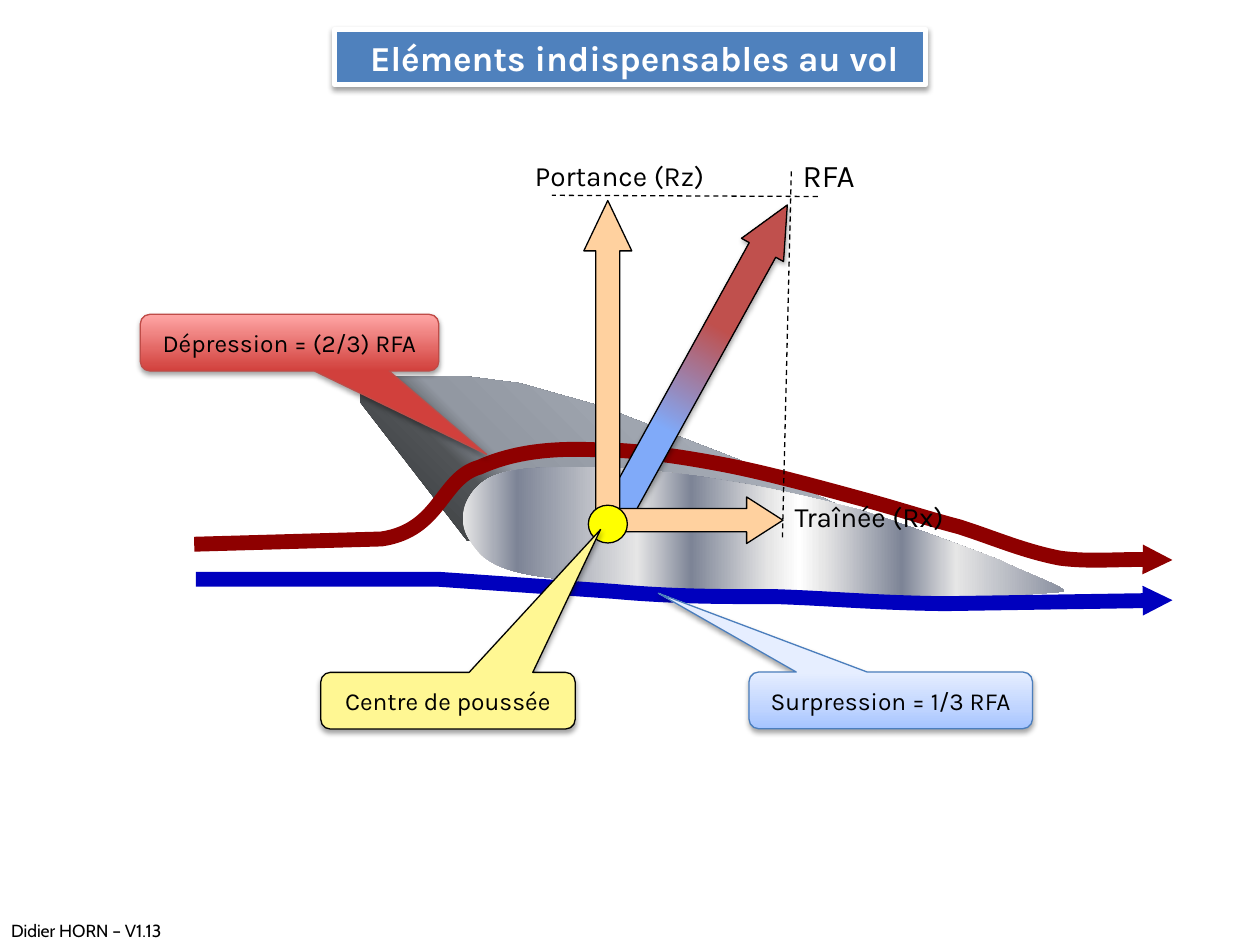
from lxml import etree
from pptx import Presentation
from pptx.dml.color import RGBColor
from pptx.enum import dml, shapes, text
from pptx.oxml import ns
from pptx.util import Pt

SHAPE = shapes.MSO_SHAPE
ANCHOR = text.MSO_ANCHOR
METAL = [(0, "E6E6E6"), (9, "7D8496"), (29, "E6E6E6"), (38, "7D8496"),
         (51, "E6E6E6"), (56, "FFFFFF"), (60, "E6E6E6"), (73, "7D8496"),
         (82, "E6E6E6"), (100, "8A90A0")]
SHADE = [(0, "303234"), (27, "505356"), (35, "9298A2"), (100, "B4BAC4")]


def rgb(color):
    return RGBColor.from_string(color)


def sub(parent, tag, **attrs):
    """Append one DrawingML element."""
    return etree.SubElement(parent, ns.qn(tag), {k: str(v) for k, v in attrs.items()})


def paint(sp, fill=None, line=None, width=0.75, angle=270, shadow=False):
    """Fill with a colour or a list of gradient stops, then line and shadow."""
    sp.shadow.inherit = False
    if fill is None:
        sp.fill.background()
    elif isinstance(fill, str):
        sp.fill.solid()
        sp.fill.fore_color.rgb = rgb(fill)
    else:
        sp.fill.gradient()
        grad = sp._element.spPr.find(ns.qn("a:gradFill"))
        for child in list(grad):
            grad.remove(child)
        stops = sub(grad, "a:gsLst")
        for pos, color in fill:
            sub(sub(stops, "a:gs", pos=pos * 1000), "a:srgbClr", val=color)
        sub(grad, "a:lin", ang=angle * 60000, scaled=0)
    if line:
        sp.line.color.rgb = rgb(line)
        sp.line.width = Pt(width)
    else:
        sp.line.fill.background()
    if shadow:
        effects = sp._element.spPr.find(ns.qn("a:effectLst"))
        outer = sub(effects, "a:outerShdw", blurRad=Pt(3.1), dist=Pt(1.7),
                    dir=90 * 60000, rotWithShape=0)
        sub(sub(outer, "a:srgbClr", val="000000"), "a:alpha", val=36000)


def write(sp, words, size, color="000000", font="Karla", bold=False,
          align=text.PP_ALIGN.CENTER, anchor=ANCHOR.MIDDLE, wrap=True):
    tf = sp.text_frame
    tf.word_wrap = wrap
    tf.vertical_anchor = anchor
    p = tf.paragraphs[0]
    p.alignment = align
    r = p.add_run()
    r.text = words
    r.font.size, r.font.name, r.font.bold = Pt(size), font, bold
    r.font.color.rgb = rgb(color)


def add_label(slide, box, words, size, **style):
    write(slide.shapes.add_textbox(*map(Pt, box)), words, size,
          anchor=ANCHOR.TOP, **style)


def add_preset(slide, kind, box, adjust=(), **style):
    sp = slide.shapes.add_shape(kind, *map(Pt, box))
    for i, value in enumerate(adjust):
        sp.adjustments[i] = value
    paint(sp, **style)
    return sp


def add_outline(slide, x, y, steps, close=True, **style):
    """Draw steps of one point (a line) or three points (a curve)."""
    steps = [[(Pt(x + px), Pt(y + py)) for px, py in step] for step in steps]
    builder = slide.shapes.build_freeform(*steps[0][-1])
    builder.add_line_segments([step[-1] for step in steps[1:]], close=close)
    sp = builder.convert_to_shape()
    path = next(sp._element.iter(ns.qn("a:path")))
    for node, step in zip(list(path)[1:], steps[1:]):
        if len(step) == 3:
            curve = etree.Element(ns.qn("a:cubicBezTo"))
            for px, py in step:
                sub(curve, "a:pt", x=px - sp.left, y=py - sp.top)
            path.replace(node, curve)
    paint(sp, **style)
    return sp


def add_dash(slide, start, end):
    c = slide.shapes.add_connector(shapes.MSO_CONNECTOR.STRAIGHT, *map(Pt, start + end))
    c.line.color.rgb = rgb("000000")
    c.line.width = Pt(0.75)
    c.line.dash_style = dml.MSO_LINE.DASH
    sub(c._element.spPr, "a:effectLst")


def wing(slide, x, y):
    body = [(0, 11), (9, 2), (60, 2), (91, 6), (137, 19), (217, 50), (274, 76),
            (61, 96), (0, 17)]
    profile = [
        [(124, 119)],
        [(94, 116), (79, 113), (69, 104)],
        [(60, 94), (58, 88), (58.5, 82)],
        [(59, 72), (68, 61), (79, 58)],
        [(90, 54), (109, 54), (120, 54)],
        [(137, 53), (154, 55), (160, 56)],
        [(184, 57), (204, 61), (222, 64)],
        [(244, 68), (264, 73), (284, 78)],
        [(309, 86), (339, 97), (365, 107)],
        [(379, 114), (404, 123), (402, 125)],
        [(374, 128), (334, 128), (324, 128.5)],
        [(254, 129), (174, 124), (124, 119)]]
    add_outline(slide, x, y, [[point] for point in body], fill=SHADE, angle=315)
    add_outline(slide, x, y, profile, fill=METAL, angle=0)


def airflow(slide, x, y):
    over = [
        [(1, 55)], [(108, 52)],
        [(142, 47), (142, 17), (164, 11)],
        [(184, 2), (206, 0), (230, 1)],
        [(254, 1), (280, 5), (306, 10)],
        [(331, 15), (360, 23), (382, 29)],
        [(404, 35), (419, 40), (438, 45)],
        [(457, 51), (475, 59), (496, 63)],
        [(512, 65), (535, 63), (560, 64)]]
    under = [
        [(2, 75)], [(140, 75)], [(241, 82)],
        [(274, 85), (302, 85), (334, 85)],
        [(365, 86), (390, 88.5), (430, 89)], [(560, 87)]]
    for steps, color in ((over, "8E0000"), (under, "0000BE")):
        sp = add_outline(slide, x, y, steps, close=False, line=color, width=8.5)
        sub(sp.line._get_or_add_ln(), "a:tailEnd", type="triangle", w="sm", len="sm")


def forces(slide, x, y):
    # Labels
    add_label(slide, (x + 164, y + 196.2, 119.5, 26.6), "Traînée (Rx)", 16)
    add_label(slide, (x, y + 1.1, 162, 26.6), "Portance (Rz)", 16)
    # Resultant and its projections
    rfa = add_preset(slide, SHAPE.UP_ARROW, (x + 113.6, y + 18.4, 27.4, 205.2),
                     (0.63, 1.07), fill=[(31, "80AAF9"), (60, "C0504D")],
                     line="000000", shadow=True)
    rfa.rotation = 28.9
    add_dash(slide, (x + 194.3, y + 26.3), (x + 42.4, y + 25.6))
    add_dash(slide, (x + 179.2, y + 11.9), (x + 174.1, y + 222))
    # Lift, drag and the point where they act
    add_preset(slide, SHAPE.UP_ARROW, (x + 60.6, y + 28.6, 27.4, 177.1),
               (0.5, 1.05), fill="FFD19F", line="000000")
    add_preset(slide, SHAPE.RIGHT_ARROW, (x + 74.3, y + 198, 100.1, 26.6),
               (0.5, 0.78), fill="FFD19F", line="000000")
    add_preset(slide, SHAPE.OVAL, (x + 63.2, y + 202.7, 22.3, 21.6),
               fill="FFFF00", line="000000")
    add_label(slide, (x + 155.5, y - 0.3, 90, 28.8), "RFA", 18)


def callout(slide, box, words, pointer, fill, line):
    sp = add_preset(slide, SHAPE.ROUNDED_RECTANGULAR_CALLOUT, box, pointer + (0.17,),
                    fill=fill, line=line, shadow=True)
    write(sp, words, 14)


def title_bar(slide, box, words):
    sp = slide.shapes.title
    sp.left, sp.top, sp.width, sp.height = map(Pt, box)
    paint(sp, "4F81BD", "FFFFFF", 3, shadow=True)
    write(sp, words, 20, "FFFFFF", bold=True)
    sp.text_frame.paragraphs[0]._p.get_or_add_pPr().set("marL", str(Pt(5)))


def main():
    prs = Presentation()
    prs.slide_width, prs.slide_height = Pt(720), Pt(540)
    slide = prs.slides.add_slide(prs.slide_layouts[5])
    add_label(slide, (-0.7, 522, 108, 19.4), "Didier HORN – V1.13 ©", 10, font="Cabin",
              align=text.PP_ALIGN.LEFT, wrap=False)
    wing(slide, 206, 213)
    airflow(slide, 110, 256)
    callout(slide, (428, 384, 162, 32.4), "Surpression = 1/3 RFA", (-0.82, -1.89),
            [(0, "A4C4FF"), (35, "BFD4FF"), (100, "E6EEFF")], "4B7EBC")
    callout(slide, (80.2, 179.6, 170.6, 32.4), "Dépression = (2/3) RFA", (0.66, 1.97),
            [(0, "D1403C"), (100, "FFA6A5")], "BF4C48")
    forces(slide, 273, 86)
    callout(slide, (183.3, 384.2, 145.4, 32.4), "Centre de poussée", (0.6, -3.02),
            "FFF793", "000000")
    title_bar(slide, (191.2, 16.8, 337.7, 31.7), "Eléments indispensables au vol")
    prs.save("out.pptx")


if __name__ == "__main__":
    main()
